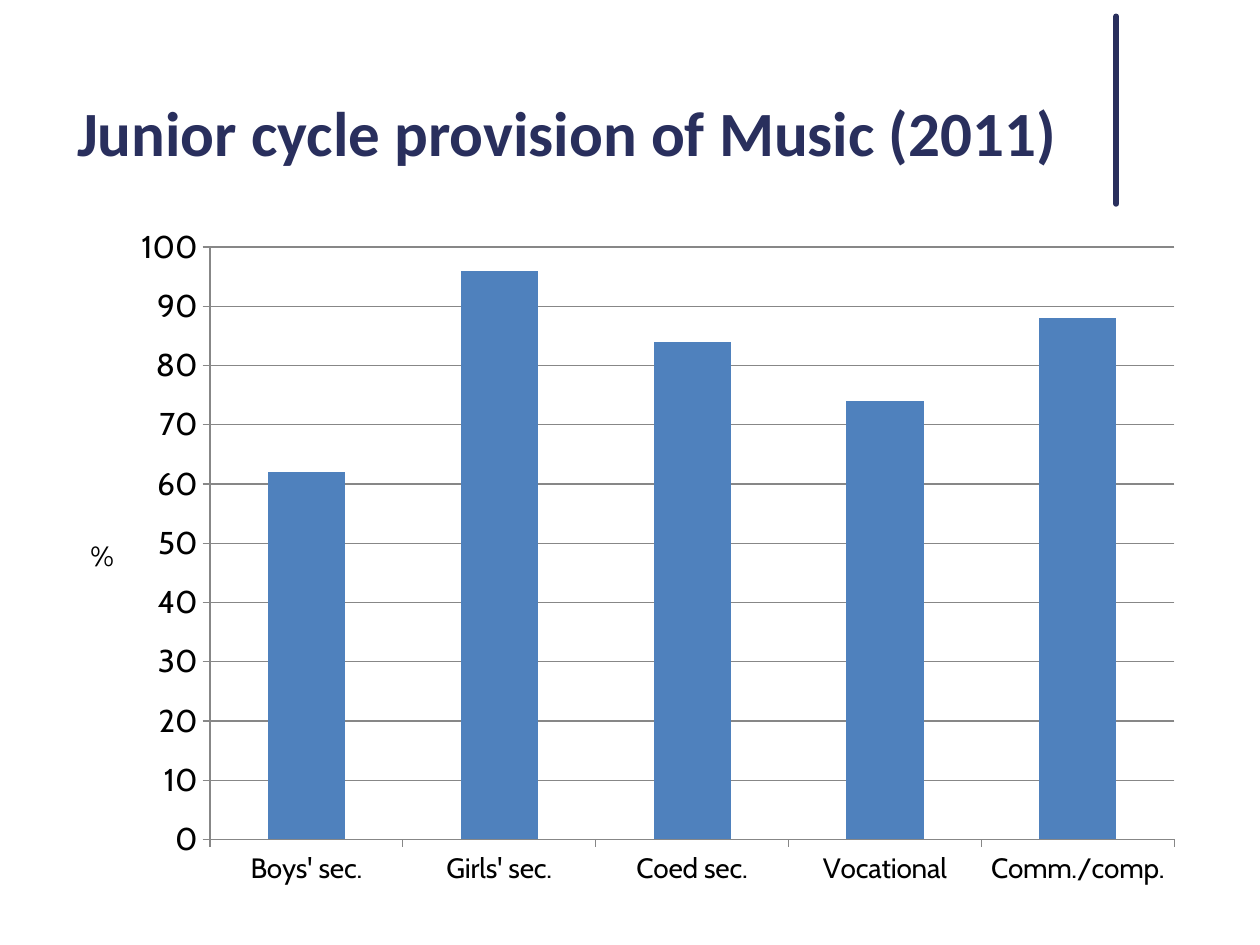
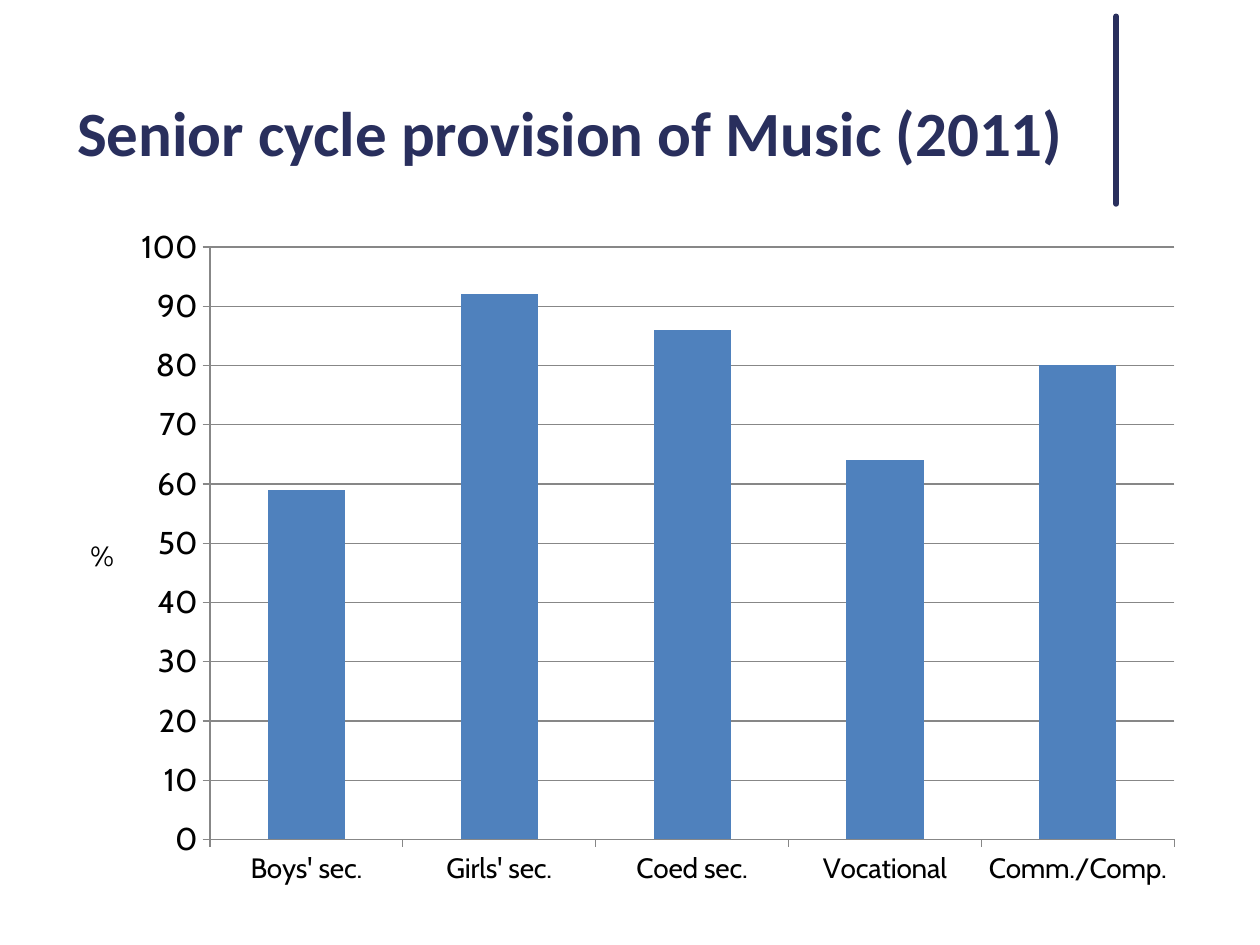
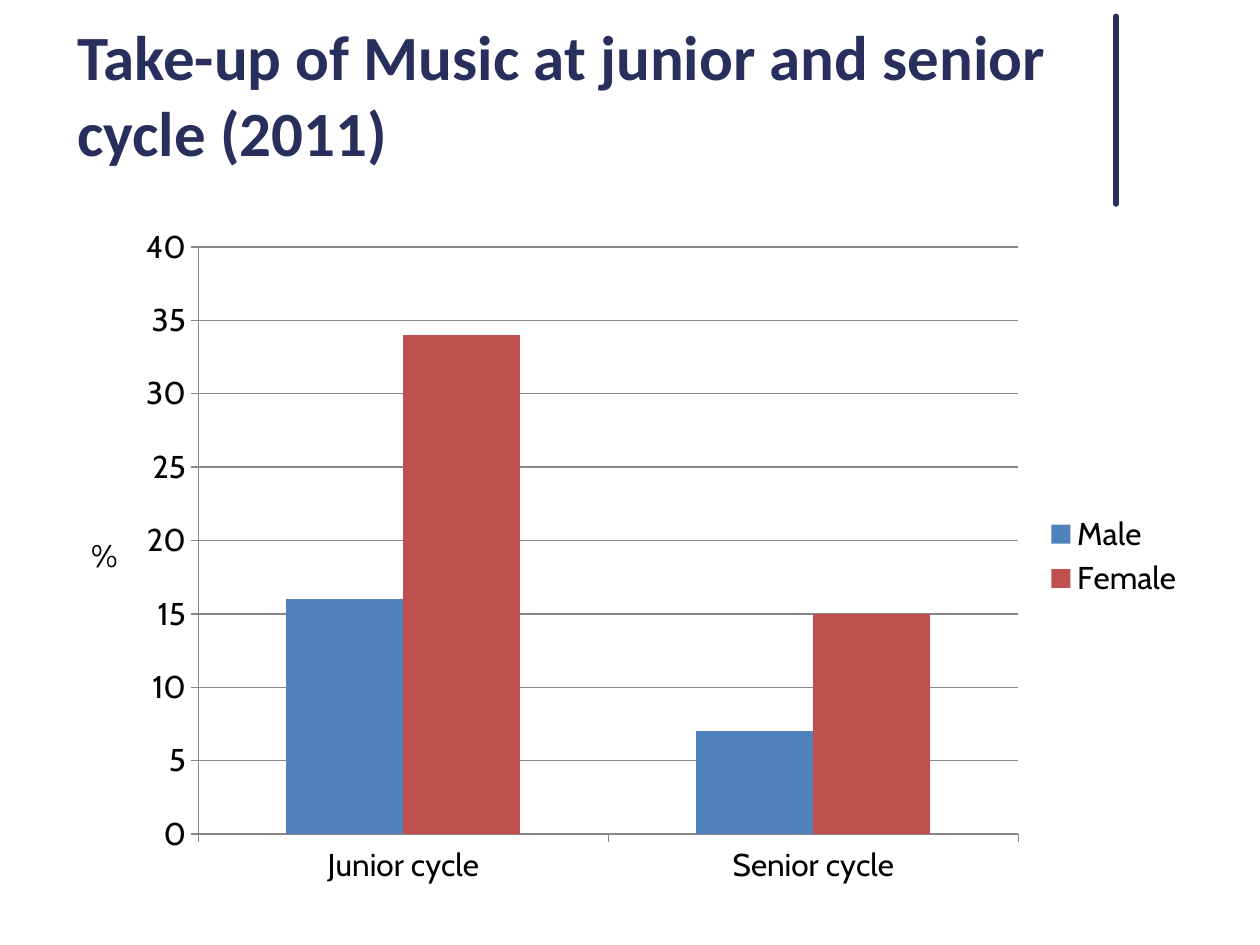
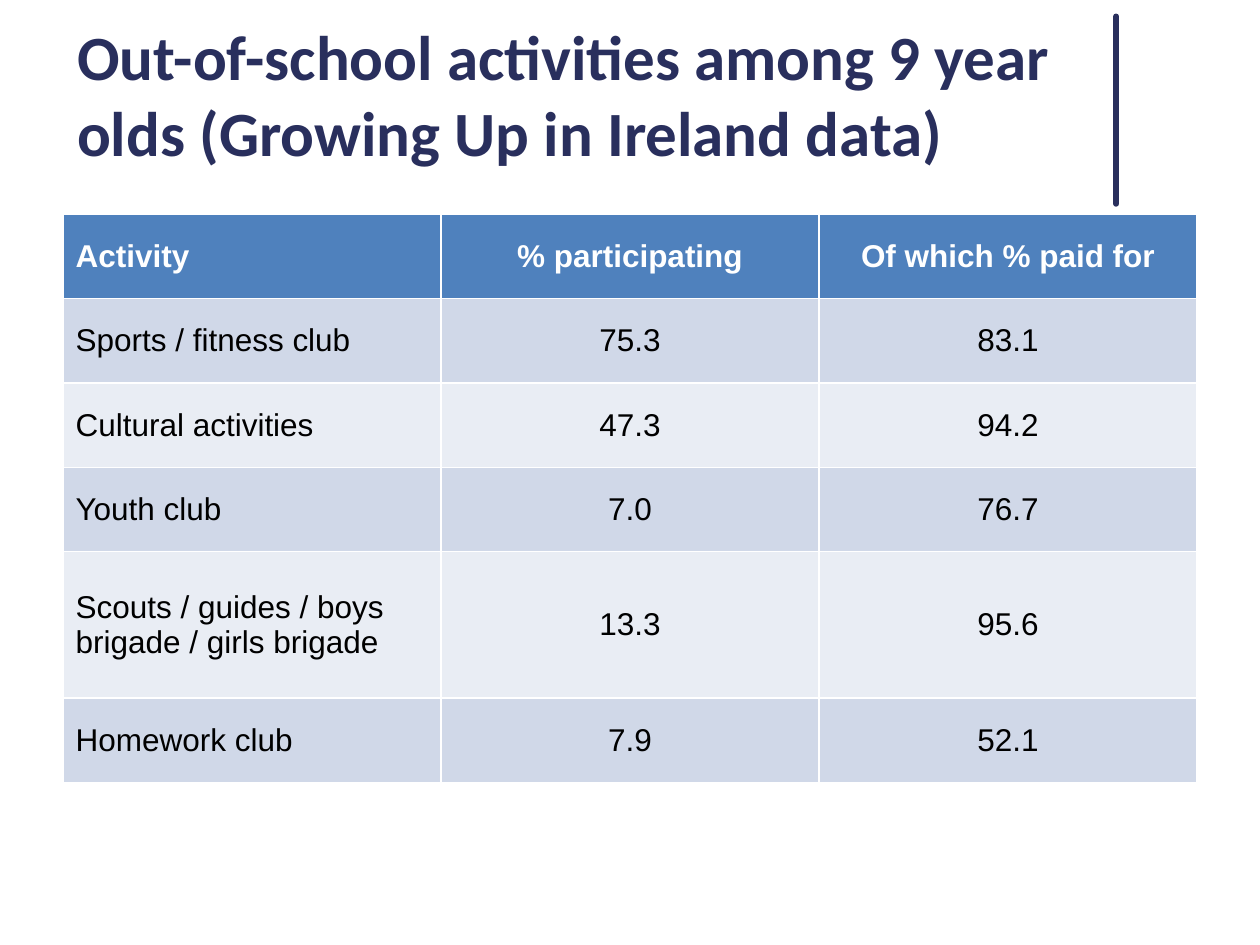
from lxml.etree import SubElement
from pptx import Presentation
from pptx.chart.data import CategoryChartData as ChartData
from pptx.dml.color import RGBColor
from pptx.enum.chart import XL_CHART_TYPE as ChartType, XL_LEGEND_POSITION as LegendPlace
from pptx.enum.chart import XL_TICK_MARK as Tick
from pptx.enum.shapes import MSO_CONNECTOR as Connector
from pptx.enum.text import MSO_ANCHOR as Anchor, MSO_AUTO_SIZE as AutoSize, PP_ALIGN as Align
from pptx.oxml.ns import qn
from pptx.util import Cm, Pt

# Shared look
NAVY, BLUE, RED, GREY = "292F5D", "4F81BD", "C0504D", "878787"
WHITE, BLACK = "FFFFFF", "000000"
BANDS = ["D0D8E8", "E9EDF4"]
BODY_LEFT, BODY_TOP, BODY_WIDTH = Cm(1.27), Cm(4.32), Cm(22.86)
TITLE_PLACE = {"left": Cm(1.3), "top": Cm(1.12), "width": Cm(20.96), "height": Cm(2.41)}
TITLE_FRAME = {"vertical_anchor": Anchor.BOTTOM, "auto_size": AutoSize.NONE, "word_wrap": True}


def colour(code):
    return RGBColor.from_string(code)


def set_format(target, values):
    for name, value in values.items():
        setattr(target, name, value)


deck = Presentation()
deck.slide_width, deck.slide_height = Cm(25.4), Cm(19.05)
title_only = deck.slide_layouts[5]

# Titles and the upright rule beside them
titles = [
    "Junior cycle provision of Music (2011)",
    "Senior cycle provision of Music (2011)",
    "Take-up of Music at junior and senior cycle (2011)",
    "Out-of-school activities among 9 year olds (Growing Up in Ireland data)",
]
pages = []
for text in titles:
    page = deck.slides.add_slide(title_only)
    pages.append(page)
    title = page.shapes.title
    set_format(title, TITLE_PLACE)
    set_format(title.text_frame, TITLE_FRAME)
    para = title.text_frame.paragraphs[0]
    para.alignment = Align.LEFT
    span = para.add_run()
    span.text = text
    set_format(span.font, {"name": "Calibri", "size": Pt(36), "bold": True})
    span.font.color.rgb = colour(NAVY)

    rule = page.shapes.add_connector(Connector.STRAIGHT, Cm(22.5), Cm(0.33), Cm(22.5), Cm(4.11))
    rule.line.color.rgb = colour(NAVY)
    rule.line.width = Pt(3.25)
    rule.line._get_or_add_ln().set("cap", "rnd")
    SubElement(rule._element.spPr, qn("a:effectLst"))

# Column charts: categories, series, axis maximum, step, label size
schools = ["Boys' sec.", "Girls' sec.", "Coed sec.", "Vocational"]
charts = [
    (schools + ["Comm./comp."], {"Series 1": [62, 96, 84, 74, 88]}, 100, 10, 16),
    (schools + ["Comm./Comp."], {"Series 1": [59, 92, 86, 64, 80]}, 100, 10, 16),
    (["Junior cycle", "Senior cycle"], {"Male": [16, 7], "Female": [34, 15]}, 40, 5, 18),
]
for page, (categories, series, maximum, step, label_size) in zip(pages, charts):
    data = ChartData()
    data.categories = categories
    for name, values in series.items():
        data.add_series(name, values)
    chart = page.shapes.add_chart(
        ChartType.COLUMN_CLUSTERED, BODY_LEFT, BODY_TOP, BODY_WIDTH, Cm(13.79), data).chart
    chart.has_title = False
    set_format(chart.font, {"name": "Cabin", "size": Pt(18)})
    chart.font.color.rgb = colour(BLACK)

    # Columns and legend
    plot = chart.plots[0]
    set_format(plot, {"gap_width": 150, "overlap": 0, "vary_by_categories": False})
    for columns, code in zip(plot.series, [BLUE, RED]):
        columns.format.fill.solid()
        columns.format.fill.fore_color.rgb = colour(code)
    chart.has_legend = len(series) > 1
    if chart.has_legend:
        set_format(chart.legend, {"position": LegendPlace.RIGHT, "include_in_layout": False})

    # Axes
    value_axis, category_axis = chart.value_axis, chart.category_axis
    set_format(value_axis, {"minimum_scale": 0, "maximum_scale": maximum, "major_unit": step,
                            "has_major_gridlines": True})
    category_axis.tick_labels.font.size = Pt(label_size)
    for axis in (value_axis, category_axis):
        set_format(axis, {"major_tick_mark": Tick.OUTSIDE, "minor_tick_mark": Tick.NONE})
    for part in (value_axis, category_axis, value_axis.major_gridlines):
        part.format.line.color.rgb = colour(GREY)
        part.format.line.width = Pt(0.75)

    # Upright percent sign beside the value axis
    para = value_axis.axis_title.text_frame.paragraphs[0]
    span = para.add_run()
    span.text = "%"
    set_format(span.font, {"name": "Cabin", "size": Pt(label_size), "bold": False})
    span.font.color.rgb = colour(BLACK)
    body = value_axis.axis_title._element.xpath(".//a:bodyPr")[0]
    body.set("rot", "0")
    body.set("vert", "horz")

# Activities table
activities = [
    ("Activity", "% participating", "Of which % paid for"),
    ("Sports / fitness club", "75.3", "83.1"),
    ("Cultural activities", "47.3", "94.2"),
    ("Youth club", "7.0", "76.7"),
    ("Scouts / guides / boys brigade / girls brigade", "13.3", "95.6"),
    ("Homework club", "7.9", "52.1"),
]
heights = [Cm(1.7)] * 4 + [Cm(2.95), Cm(1.7)]
table = pages[3].shapes.add_table(
    len(activities), 3, BODY_LEFT, BODY_TOP, BODY_WIDTH, sum(heights)).table
for row, (height, texts) in enumerate(zip(heights, activities)):
    table.rows[row].height = height
    header = row == 0
    for column, text in enumerate(texts):
        cell = table.cell(row, column)
        cell.vertical_anchor = Anchor.MIDDLE
        cell.fill.solid()
        cell.fill.fore_color.rgb = colour(BLUE if header else BANDS[(row - 1) % 2])
        para = cell.text_frame.paragraphs[0]
        para.alignment = Align.CENTER if column else Align.LEFT
        span = para.add_run()
        span.text = text
        set_format(span.font, {"name": "Arial", "size": Pt(18), "bold": header})
        span.font.color.rgb = colour(WHITE if header else BLACK)

deck.save("out.pptx")
